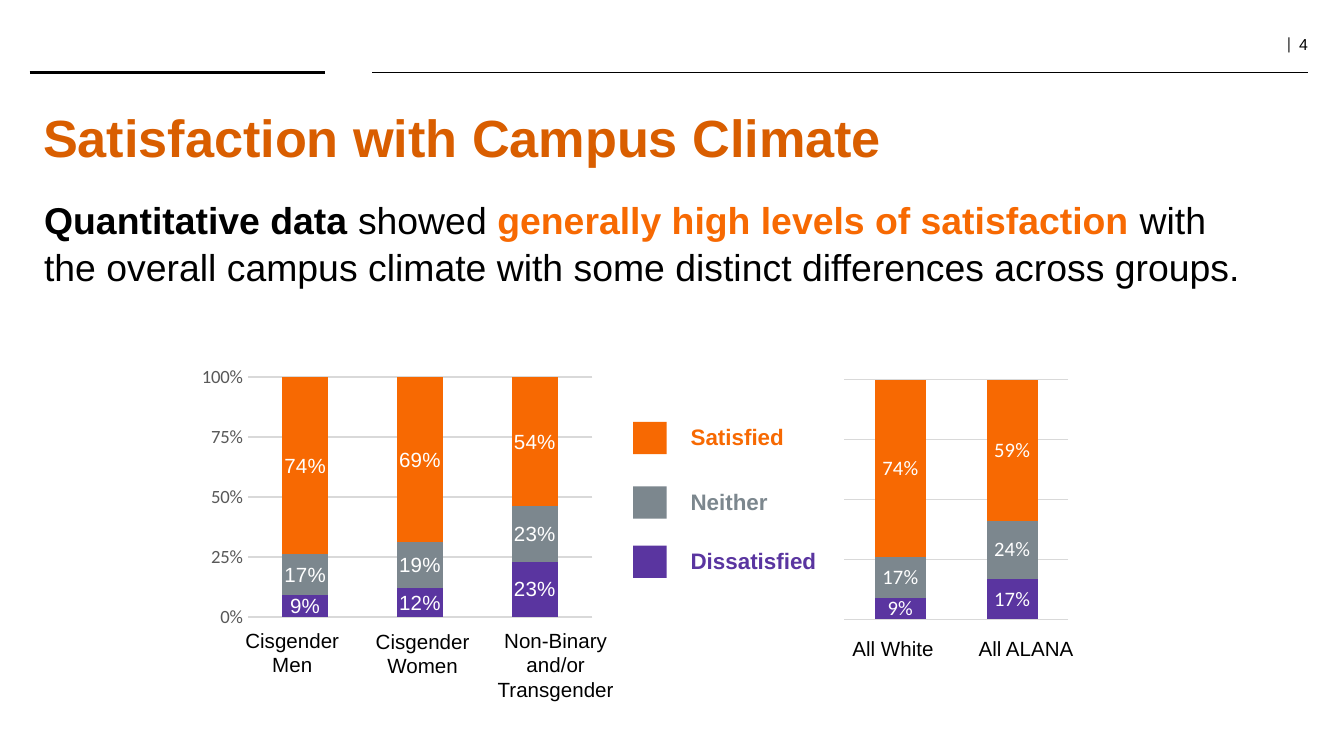
from dataclasses import dataclass

from lxml import etree
from pptx import Presentation
from pptx.chart.data import CategoryChartData
from pptx.dml.color import RGBColor
from pptx.enum.chart import XL_CHART_TYPE, XL_LABEL_POSITION, XL_TICK_MARK
from pptx.enum.shapes import MSO_CONNECTOR, MSO_SHAPE
from pptx.enum.text import MSO_ANCHOR, PP_ALIGN
from pptx.oxml import parse_xml
from pptx.oxml.ns import nsdecls, qn
from pptx.util import Inches, Pt

STACKED = XL_CHART_TYPE.COLUMN_STACKED_100
CENTER_LABEL = XL_LABEL_POSITION.CENTER
NO_TICK = XL_TICK_MARK.NONE
STRAIGHT = MSO_CONNECTOR.STRAIGHT
RECTANGLE = MSO_SHAPE.RECTANGLE
TOP = MSO_ANCHOR.TOP
LEFT, CENTER, RIGHT = PP_ALIGN.LEFT, PP_ALIGN.CENTER, PP_ALIGN.RIGHT


@dataclass(frozen=True)
class Theme:
    """Colours, fonts and type sizes of the slide."""
    black: str = "000000"
    white: str = "FFFFFF"
    title: str = "D95E00"
    satisfied: str = "F76902"
    neither: str = "7C878E"
    dissatisfied: str = "5A35A0"
    axis: str = "595959"
    grid: str = "D9D9D9"
    sans: str = "Arial"
    chart_sans: str = "Calibri"
    serif: str = "Cambria"
    title_size: float = 28
    body_size: float = 20
    legend_size: float = 12
    label_size: float = 11
    axis_size: float = 10
    bar_size: float = 9
    page_size: float = 8.5


THEME = Theme()


def rgb(color):
    """Turn a hex string into a colour."""
    return RGBColor.from_string(color)


def style_font(font, size, color=THEME.black, name=THEME.sans, bold=False):
    """Set the face, size, weight and colour of a font."""
    font.name, font.size, font.bold = name, Pt(size), bold
    font.color.rgb = rgb(color)


def write_text(shape, runs, *, align=LEFT, spacing=None):
    """Fill a shape with one paragraph of (text, font format) runs."""
    frame = shape.text_frame
    frame.word_wrap = True
    frame.vertical_anchor = TOP
    paragraph = frame.paragraphs[0]
    paragraph.alignment = align
    paragraph.space_before = Pt(0)
    if spacing:
        paragraph.line_spacing = spacing
    for text, font_format in runs:
        run = paragraph.add_run()
        run.text = text
        style_font(run.font, **font_format)


def add_text(slide, box, runs, **paragraph_format):
    """Add a text box at (left, top, width, height)."""
    text_box = slide.shapes.add_textbox(*map(Inches, box))
    write_text(text_box, runs, **paragraph_format)


def add_title(slide, box, text):
    """Place and format the title placeholder."""
    title = slide.shapes.title
    title.left, title.top, title.width, title.height = map(Inches, box)
    title_format = dict(size=THEME.title_size, color=THEME.title, bold=True)
    write_text(title, [(text, title_format)])


def add_rule(slide, start, end, y, weight):
    """Draw a horizontal header rule."""
    rule = slide.shapes.add_connector(STRAIGHT, *map(Inches, (start, y, end, y)))
    rule.line.color.rgb = rgb(THEME.black)
    rule.line.width = Pt(weight)
    etree.SubElement(rule._element.spPr, qn("a:effectLst"))


def add_legend_entry(slide, top, text, color):
    """Add a colour swatch and its caption."""
    swatch = slide.shapes.add_shape(RECTANGLE, *map(Inches, (4.71, top, 0.25, 0.24)))
    swatch.shadow.inherit = False
    swatch.fill.solid()
    swatch.fill.fore_color.rgb = rgb(color)
    swatch.line.fill.background()
    caption_format = dict(size=THEME.legend_size, color=color, bold=True)
    add_text(slide, (5.04, top - 0.04, 1.15, 0.3), [(text, caption_format)])


def set_plot_area(chart, bounds):
    """Fix the inner plot area as fractions of the chart."""
    places = "".join(f'<c:{tag} val="{value}"/>' for tag, value in zip("xywh", bounds))
    layout = parse_xml(
        f'<c:layout {nsdecls("c")}><c:manualLayout><c:layoutTarget val="inner"/>'
        f'<c:xMode val="edge"/><c:yMode val="edge"/>{places}</c:manualLayout></c:layout>')
    plot_area = chart._chartSpace.chart.plotArea
    for automatic in plot_area.findall(qn("c:layout")):
        plot_area.remove(automatic)
    plot_area.insert(0, layout)


def add_satisfaction_chart(slide, box, levels, *, gap, bounds, label_font, show_axis):
    """Add a 100% stacked column chart of (values, colour) levels."""
    data = CategoryChartData(number_format="0%")
    data.categories = [str(i + 1) for i in range(len(levels[0][0]))]
    for number, (values, _) in enumerate(levels, 1):
        data.add_series(f"Series {number}", values)
    chart = slide.shapes.add_chart(STACKED, *map(Inches, box), data).chart
    chart.has_legend = chart.has_title = False
    style_font(chart.font, THEME.axis_size)
    set_plot_area(chart, bounds)

    chart.category_axis.visible = False
    scale = chart.value_axis
    scale.visible = show_axis
    scale.major_unit = 0.25
    scale.major_tick_mark = scale.minor_tick_mark = NO_TICK
    scale.format.line.fill.background()
    scale.major_gridlines.format.line.color.rgb = rgb(THEME.grid)
    scale.major_gridlines.format.line.width = Pt(0.75)
    scale.tick_labels.number_format = "0%"
    scale.tick_labels.number_format_is_linked = False
    style_font(scale.tick_labels.font, THEME.axis_size, THEME.axis, THEME.chart_sans)

    plot = chart.plots[0]
    plot.gap_width, plot.overlap, plot.vary_by_categories = gap, 100, False
    for series, (_, color) in zip(plot.series, levels):
        series.format.fill.solid()
        series.format.fill.fore_color.rgb = rgb(color)
        labels = series.data_labels
        labels.show_value = True
        labels.position = CENTER_LABEL
        labels.number_format, labels.number_format_is_linked = "0%", False
        style_font(labels.font, THEME.label_size, THEME.white, label_font)


def main():
    """Build the campus climate slide."""
    deck = Presentation()
    deck.slide_width, deck.slide_height = Inches(10), Inches(10 * 9 / 16)
    slide = deck.slides.add_slide(deck.slide_layouts[5])

    add_text(slide, (8.81, 0.23, 1.02, 0.22), [
        ("|  ", dict(size=THEME.bar_size, name=THEME.serif)),
        ("4", dict(size=THEME.page_size)),
    ], align=RIGHT, spacing=0.8)
    add_rule(slide, 0.22, 2.42, 0.54, 2)
    add_rule(slide, 2.77, 9.73, 0.54, 1)
    add_title(slide, (0.22, 0.73, 9.51, 0.57), "Satisfaction with Campus Climate")

    plain = dict(size=THEME.body_size)
    strong = dict(plain, bold=True)
    add_text(slide, (0.23, 1.4, 9.22, 0.87), [
        ("Quantitative data ", strong),
        ("showed ", plain),
        ("generally high levels of satisfaction ", dict(strong, color=THEME.satisfied)),
        ("with the overall campus climate with some distinct differences "
         "across groups.", plain),
    ], spacing=1.05)

    colors = (THEME.dissatisfied, THEME.neither, THEME.satisfied)
    gender = ((0.09, 0.12, 0.23), (0.17, 0.19, 0.23), (0.74, 0.69, 0.54))
    race = ((0.09, 0.17), (0.17, 0.24), (0.74, 0.59))
    add_satisfaction_chart(
        slide, (1.28, 2.27, 4.38, 2.89), list(zip(gender, colors)), gap=150,
        bounds=(0.129, 0.185, 0.585, 0.618), label_font=THEME.sans, show_axis=True)
    add_satisfaction_chart(
        slide, (6.13, 2.7, 1.97, 2.09), list(zip(race, colors)), gap=120,
        bounds=(0.078, 0.06, 0.845, 0.854), label_font=THEME.chart_sans, show_axis=False)

    for top, level, color in ((3.14, "Satisfied", THEME.satisfied),
                              (3.62, "Neither", THEME.neither),
                              (4.06, "Dissatisfied", THEME.dissatisfied)):
        add_legend_entry(slide, top, level, color)

    for group, *box in (("Cisgender Men", 1.61, 4.62, 1.13, 0.47),
                        ("Cisgender Women", 2.48, 4.63, 1.33, 0.47),
                        ("Non-Binary and/or Transgender", 3.47, 4.62, 1.33, 0.66),
                        ("All White", 6.08, 4.68, 1.13, 0.29),
                        ("All ALANA", 6.97, 4.68, 1.33, 0.29)):
        add_text(slide, box, [(group, dict(size=THEME.label_size))], align=CENTER)

    deck.save("out.pptx")


if __name__ == "__main__":
    main()
